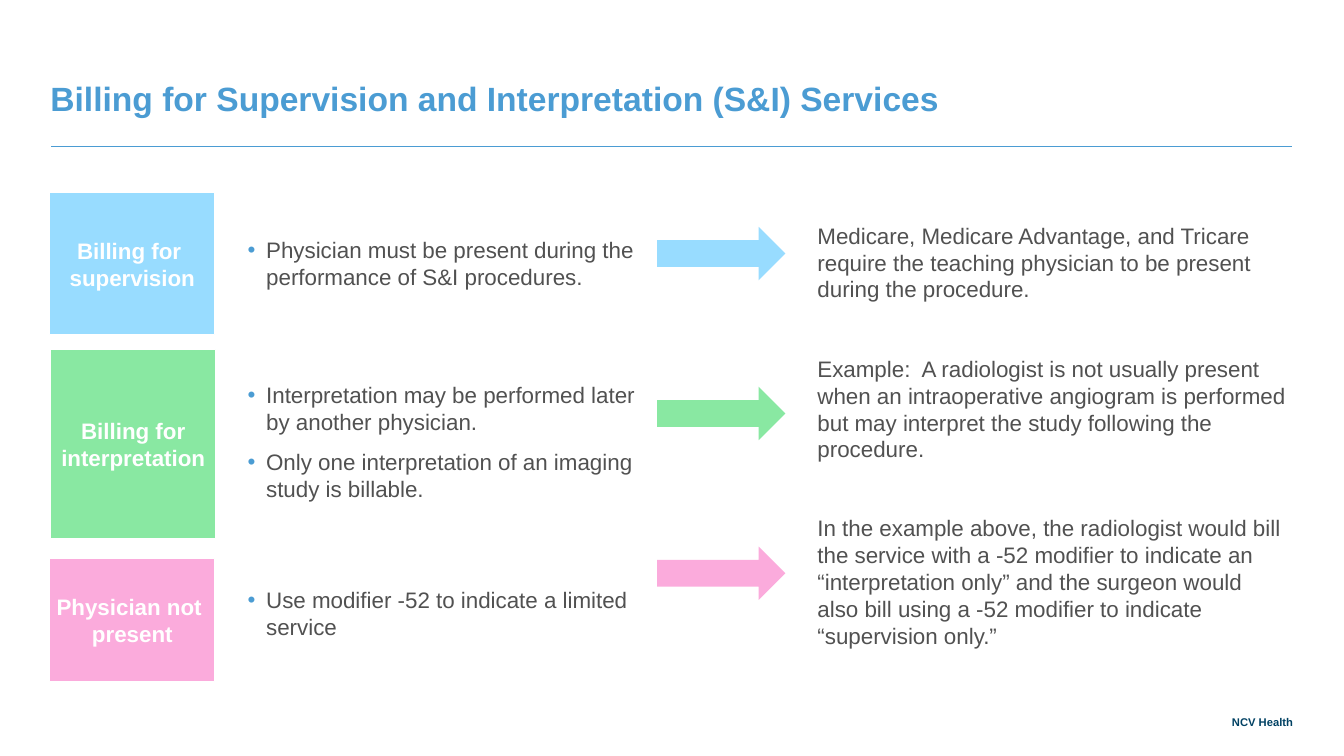
"""Build the slide on billing for supervision and interpretation services."""
from lxml.etree import SubElement
from pptx import Presentation
from pptx.dml.color import RGBColor
from pptx.enum.shapes import MSO_CONNECTOR, MSO_SHAPE
from pptx.enum.text import MSO_ANCHOR, PP_ALIGN
from pptx.oxml.ns import qn
from pptx.util import Pt

TITLE = "Billing for Supervision and Interpretation (S&I) Services"
FOOTER = "NCV Health"
COLORS = {
    "accent": "4B9CD3", "body": "515151", "white": "FFFFFF", "footer": "004163",
    "supervision": "98DCFF", "interpretation": "89E8A2", "absent": "FBABDC",
}
ROWS = [
    {
        "color": "supervision",
        "label": ["Billing for ", "supervision"],
        "label_box": (35.5, 137.8, 118, 101.3),
        "points": ["Physician must be present during the performance of S&I procedures."],
        "points_top": 168.6,
        "note": "Medicare, Medicare Advantage, and Tricare require the teaching physician "
                "to be present during the procedure.",
        "note_top": 158.5,
    },
    {
        "color": "interpretation",
        "label": ["Billing for", "interpretation"],
        "label_box": (36.2, 249.8, 118, 134.6),
        "points": ["Interpretation may be performed later by another physician.",
                   "Only one interpretation of an imaging study is billable."],
        "points_top": 272.6,
        "note": "Example:  A radiologist is not usually present when an intraoperative "
                "angiogram is performed but may interpret the study following the procedure.",
        "note_top": 253.5,
    },
    {
        "color": "absent",
        "label": ["Physician not ", "present"],
        "label_box": (35.5, 399, 118, 87.6),
        "points": ["Use modifier -52 to indicate a limited service"],
        "points_top": 419,
        "note": "In the example above, the radiologist would bill the service with a -52 "
                "modifier to indicate an “interpretation only” and the surgeon would also "
                "bill using a -52 modifier to indicate “supervision only.”",
        "note_top": 367.5,
    },
]
POINTS_LEFT, POINTS_WIDTH = 167.8, 287.3
NOTE_LEFT, NOTE_WIDTH = 583.9, 336.2
LINE_HEIGHT, PARAGRAPH_GAP = 19.2, 9
ARROW_LEFT, ARROW_TOP, ARROW_PITCH = 469.4, 162, 114.2
ARROW_WIDTH, ARROW_HEIGHT = 91.6, 38.2


def color(name):
    return RGBColor.from_string(COLORS[name])


def write(shape, lines, size=16, ink="body", bold=False, align=PP_ALIGN.LEFT,
          anchor=MSO_ANCHOR.TOP, wrap=True, inset=0, gap=0, spacing=None, bullet=False):
    """Fill a shape with formatted paragraphs."""
    frame = shape.text_frame
    frame.word_wrap = wrap
    frame.vertical_anchor = anchor
    frame.margin_left = frame.margin_right = Pt(inset)
    frame.margin_top = frame.margin_bottom = Pt(inset)
    for index, line in enumerate(lines):
        para = frame.add_paragraph() if index else frame.paragraphs[0]
        para.alignment = align
        para.space_before = Pt(0)
        para.space_after = Pt(gap)
        if spacing:
            para.line_spacing = Pt(spacing)
        if bullet:
            properties = para._p.get_or_add_pPr()
            properties.set("marL", str(Pt(22.3)))
            properties.set("indent", str(Pt(-13.3)))
            tint = SubElement(properties, qn("a:buClr"))
            SubElement(tint, qn("a:srgbClr"), val=COLORS["accent"])
            SubElement(properties, qn("a:buFont"), typeface="Arial")
            SubElement(properties, qn("a:buChar"), char="•")
        span = para.add_run()
        span.text = line
        span.font.name = "Arial"
        span.font.size = Pt(size)
        span.font.bold = bold
        span.font.color.rgb = color(ink)


def add_text(page, left, top, width, height, lines, **style):
    box = page.shapes.add_textbox(Pt(left), Pt(top), Pt(width), Pt(height))
    write(box, lines, **style)


def add_block(page, kind, left, top, width, height, fill):
    block = page.shapes.add_shape(kind, Pt(left), Pt(top), Pt(width), Pt(height))
    block.shadow.inherit = False
    block.fill.solid()
    block.fill.fore_color.rgb = color(fill)
    block.line.fill.background()
    return block


def add_row(page, index, row):
    label = add_block(page, MSO_SHAPE.RECTANGLE, *row["label_box"], row["color"])
    label.line.color.rgb = color("white")
    label.line.width = Pt(0.75)
    write(label, row["label"], ink="white", bold=True, align=PP_ALIGN.CENTER,
          anchor=MSO_ANCHOR.MIDDLE, wrap=False, inset=7.2)
    points_height = len(row["points"]) * (2 * LINE_HEIGHT + PARAGRAPH_GAP)
    add_text(page, POINTS_LEFT, row["points_top"], POINTS_WIDTH, points_height,
             row["points"], gap=PARAGRAPH_GAP, bullet=True)
    add_block(page, MSO_SHAPE.RIGHT_ARROW, ARROW_LEFT, ARROW_TOP + index * ARROW_PITCH,
              ARROW_WIDTH, ARROW_HEIGHT, row["color"])
    add_text(page, NOTE_LEFT, row["note_top"], NOTE_WIDTH, (index + 3) * LINE_HEIGHT,
             [row["note"]])


def main():
    deck = Presentation()
    deck.slide_width, deck.slide_height = Pt(960), Pt(540)
    page = deck.slides.add_slide(deck.slide_layouts[5])

    title = page.shapes.title
    title.left, title.top, title.width, title.height = Pt(36), Pt(27.4), Pt(821.5), Pt(56.9)
    write(title, [TITLE], size=24, ink="accent", bold=True,
          anchor=MSO_ANCHOR.BOTTOM, spacing=28)

    rule = page.shapes.add_connector(MSO_CONNECTOR.STRAIGHT, Pt(36.7), Pt(104.5),
                                     Pt(923), Pt(104.5))
    rule.line.color.rgb = color("accent")
    rule.line.width = Pt(0.5)
    SubElement(rule._element.spPr, qn("a:effectLst"))

    for index, row in enumerate(ROWS):
        add_row(page, index, row)

    add_text(page, 805.7, 504, 118, 16.6, [FOOTER], size=8, ink="footer", bold=True,
             align=PP_ALIGN.RIGHT, anchor=MSO_ANCHOR.BOTTOM)
    deck.save("out.pptx")


if __name__ == "__main__":
    main()
